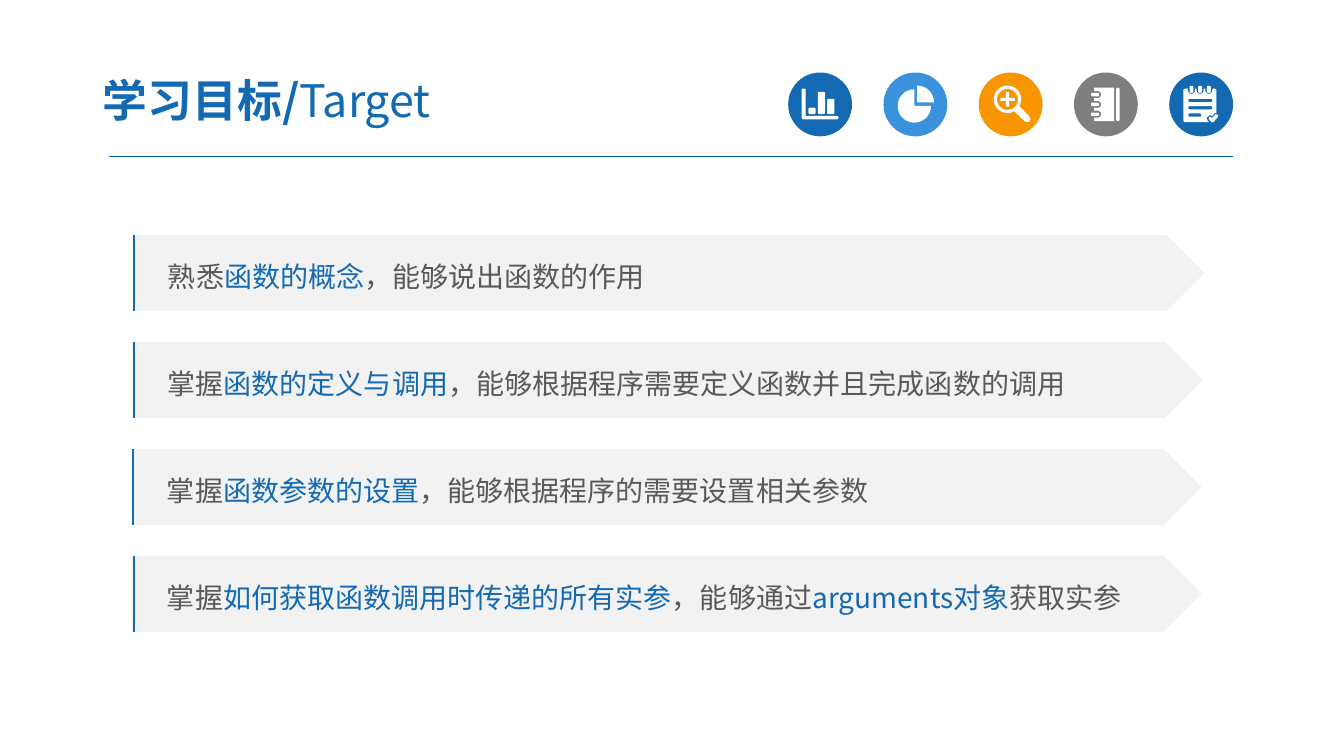
"""Build the learning-targets slide with its icon row and four objective bars."""
from dataclasses import dataclass
from math import cos, radians, sin

from lxml.etree import SubElement
from pptx import Presentation
from pptx.dml.color import RGBColor
from pptx.enum.shapes import MSO_CONNECTOR, MSO_SHAPE
from pptx.enum.text import MSO_ANCHOR, MSO_AUTO_SIZE, PP_ALIGN
from pptx.oxml.ns import qn
from pptx.shapes.autoshape import Shape
from pptx.slide import Slide
from pptx.text.text import _Paragraph, _Run
from pptx.util import Pt

BLUE = RGBColor(0x13, 0x69, 0xB2)
SKY = RGBColor(0x39, 0x92, 0xDB)
ORANGE = RGBColor(0xF7, 0x96, 0x00)
GRAY = RGBColor(0x7F, 0x7F, 0x7F)
NAVY = RGBColor(0x00, 0x5B, 0x9E)
TEXT_GRAY = RGBColor(0x59, 0x59, 0x59)
BAR_GRAY = RGBColor(0xF2, 0xF2, 0xF2)
WHITE = RGBColor(0xFF, 0xFF, 0xFF)
FONT = "Noto Sans CJK SC"

BADGE_LEFT, BADGE_TOP, BADGE_SIZE, BADGE_PITCH = 563, 51.8, 45.6, 68.04
BAR_TOP, BAR_HEIGHT, BAR_PITCH = 167.9, 54.2, 76.4

Contour = list[tuple[float, float]]


@dataclass
class Badge:
    color: RGBColor
    contours: list[Contour]


@dataclass
class Objective:
    left: float
    width: float
    accent_x: float
    phrases: list[tuple[str, RGBColor]]


def arc(cx: float, cy: float, radius: float, start: float, end: float, steps: int = 32) -> Contour:
    angles = [radians(start + (end - start) * i / steps) for i in range(steps + 1)]
    return [(cx + radius * cos(a), cy + radius * sin(a)) for a in angles]


def rounded(left: float, top: float, right: float, bottom: float, radius: float = 1.1) -> Contour:
    corners = [(right - radius, bottom - radius), (left + radius, bottom - radius),
               (left + radius, top + radius), (right - radius, top + radius)]
    return [point for i, (x, y) in enumerate(corners)
            for point in arc(x, y, radius, 90 * i, 90 * i + 90, 6)]


def bar_chart() -> list[Contour]:
    axes = [(-13.2, -11), (-11.8, -11.4), (-10.4, -11), (-10.4, 8.3), (12.6, 8.3),
            (13.3, 9.4), (12.6, 10.6), (-12.4, 10.6), (-13.2, 9.8)]
    columns = [(-8.3, 2.4), (-1.6, -9), (5.1, -4)]
    return [axes] + [rounded(x, top, x + 5.1, 6.9) for x, top in columns]


def pie_chart() -> list[Contour]:
    slice_corner, rest_corner = (1.4, -1.5), (-0.7, 1.1)
    return [[slice_corner] + arc(*slice_corner, 11.9, -90, 0),
            [rest_corner] + arc(*rest_corner, 11.9, 0, 270)]


def magnifier() -> list[Contour]:
    cx, cy, reach, half = -2.2, -3.6, 5.2, 1.1
    handle = [(13, 8.3), (14.3, 10.4), (13.4, 12.4), (11.4, 12.7), (10.1, 12)]
    quarter = [(half, -half), (half, -reach), (-half, -reach)]
    plus = []
    for _ in range(4):
        plus += [(cx + x, cy + y) for x, y in quarter]
        quarter = [(y, -x) for x, y in quarter]
    return [arc(cx, cy, 9.8, 60, 390) + handle, arc(cx, cy, 7.5, 0, 360), plus]


def notebook() -> list[Contour]:
    rings = (7, 0, -7)
    cover = [(-8.4, -11.9), (6, -11.9), (6, 11.9), (-8.4, 11.9)]
    for y in rings:
        cover += [(-8.4, y + 2.5)] + arc(-5.9, y, 2.5, 90, -90) + [(-8.4, y - 2.5)]
    return [cover, rounded(7.4, -11.9, 9.8, 11.9)] + [
        rounded(-10.6, y - 1.2, -4.8, y + 1.2) for y in rings]


def checklist() -> list[Contour]:
    rings = (-6.9, -0.7, 5.5)
    page = [(-12.7, 11.8), (-12.7, -10.4), (-11.9, -11.2)]
    for x in rings:
        page += [(x - 2.5, -11.2)] + arc(x, -10.1, 2.5, 180, 0) + [(x + 2.5, -11.2)]
    page += [(10.2, -11.2), (11, -10.4), (11, 6.1), (9.6, 6.2), (8.1, 8.3), (6, 7.6),
             (4, 9.5), (4.6, 11.6), (5.6, 12.6), (-11.9, 12.6)]
    tick = [(11.9, 9), (8.9, 12.6), (7.4, 12.6), (5.3, 10.4), (6, 8.6),
            (8, 9.7), (10.3, 6.9), (12.2, 7.6)]
    lines = [rounded(-9.1, y, right, y + 2.3) for y, right in ((-4, 8.1), (1.2, 8.1), (6.5, 0.2))]
    return [page, tick] + lines + [rounded(x - 1.4, -13.3, x + 1.4, -8.3) for x in rings]


BADGES = [Badge(BLUE, bar_chart()), Badge(SKY, pie_chart()), Badge(ORANGE, magnifier()),
          Badge(GRAY, notebook()), Badge(BLUE, checklist())]

OBJECTIVES = [
    Objective(95, 765.5, 95.9, [
        ("熟悉", TEXT_GRAY), ("函数的概念", BLUE), ("，能够说出函数的作用", TEXT_GRAY)]),
    Objective(94.8, 764.5, 95.9, [
        ("掌握", TEXT_GRAY), ("函数的定义与调用", BLUE),
        ("，能够根据程序需要定义函数并且完成函数的调用", TEXT_GRAY)]),
    Objective(94.3, 764, 95.2, [
        ("掌握", TEXT_GRAY), ("函数参数的设置", BLUE),
        ("，能够根据程序的需要设置相关参数", TEXT_GRAY)]),
    Objective(94.3, 764, 95.9, [
        ("掌握", TEXT_GRAY), ("如何获取函数调用时传递的所有实参", BLUE), ("，能够通过", TEXT_GRAY),
        ("arguments对象", BLUE), ("获取实参", TEXT_GRAY)]),
]


def paint(shape: Shape, color: RGBColor) -> None:
    shape.shadow.inherit = False
    shape.fill.solid()
    shape.fill.fore_color.rgb = color
    shape.line.fill.background()


def add_phrase(paragraph: _Paragraph, text: str, size: float, color: RGBColor) -> _Run:
    run = paragraph.add_run()
    run.text = text
    run.font.size = Pt(size)
    run.font.name = FONT
    run.font.color.rgb = color
    SubElement(run.font._element, qn("a:ea")).set("typeface", FONT)
    return run


def add_rule(slide: Slide, start: tuple[float, float], end: tuple[float, float],
             color: RGBColor, width: float) -> None:
    rule = slide.shapes.add_connector(
        MSO_CONNECTOR.STRAIGHT, *(Pt(value) for value in start + end))
    rule.line.color.rgb = color
    rule.line.width = Pt(width)
    SubElement(rule._element.spPr, qn("a:effectLst"))


def add_title(slide: Slide) -> None:
    title = slide.shapes.title
    title.left, title.top, title.width, title.height = Pt(64.1), Pt(45.4), Pt(375.8), Pt(51.8)
    frame = title.text_frame
    frame.auto_size = MSO_AUTO_SIZE.NONE
    frame.vertical_anchor = MSO_ANCHOR.MIDDLE
    frame.margin_left = frame.margin_right = Pt(9.4)
    frame.margin_top = frame.margin_bottom = Pt(5)
    paragraph = frame.paragraphs[0]
    paragraph.alignment = PP_ALIGN.LEFT
    for text, bold in (("学习目标/", True), ("Target", False)):
        add_phrase(paragraph, text, 32, BLUE).font.bold = bold


def add_badge(slide: Slide, badge: Badge, left: float) -> None:
    disc = slide.shapes.add_shape(
        MSO_SHAPE.OVAL, Pt(left), Pt(BADGE_TOP), Pt(BADGE_SIZE), Pt(BADGE_SIZE))
    paint(disc, badge.color)
    cx, cy = left + BADGE_SIZE / 2, BADGE_TOP + BADGE_SIZE / 2
    outlines = [[((cx + x) * 10, (cy + y) * 10) for x, y in contour] for contour in badge.contours]
    builder = slide.shapes.build_freeform(*outlines[0][0], scale=Pt(0.1))
    builder.add_line_segments(outlines[0][1:])
    for outline in outlines[1:]:
        builder.move_to(*outline[0])
        builder.add_line_segments(outline[1:])
    paint(builder.convert_to_shape(), WHITE)


def add_objective(slide: Slide, objective: Objective, top: float) -> None:
    bar = slide.shapes.add_shape(
        MSO_SHAPE.PENTAGON, Pt(objective.left), Pt(top), Pt(objective.width), Pt(BAR_HEIGHT))
    paint(bar, BAR_GRAY)
    frame = bar.text_frame
    frame.margin_left = Pt(25)
    frame.vertical_anchor = MSO_ANCHOR.MIDDLE
    paragraph = frame.paragraphs[0]
    paragraph.alignment = PP_ALIGN.LEFT
    paragraph.line_spacing = 1.2
    for text, color in objective.phrases:
        add_phrase(paragraph, text, 20, color)
    add_rule(slide, (objective.accent_x, top + BAR_HEIGHT), (objective.accent_x, top), BLUE, 1.5)


def main() -> None:
    deck = Presentation()
    deck.slide_width, deck.slide_height = Pt(960), Pt(540)
    slide = deck.slides.add_slide(deck.slide_layouts[5])
    add_rule(slide, (78, 111.6), (880.6, 111.6), NAVY, 0.75)
    for i, badge in enumerate(BADGES):
        add_badge(slide, badge, BADGE_LEFT + BADGE_PITCH * i)
    add_title(slide)
    for i, objective in enumerate(OBJECTIVES):
        add_objective(slide, objective, BAR_TOP + BAR_PITCH * i)
    deck.save("out.pptx")


if __name__ == "__main__":
    main()
